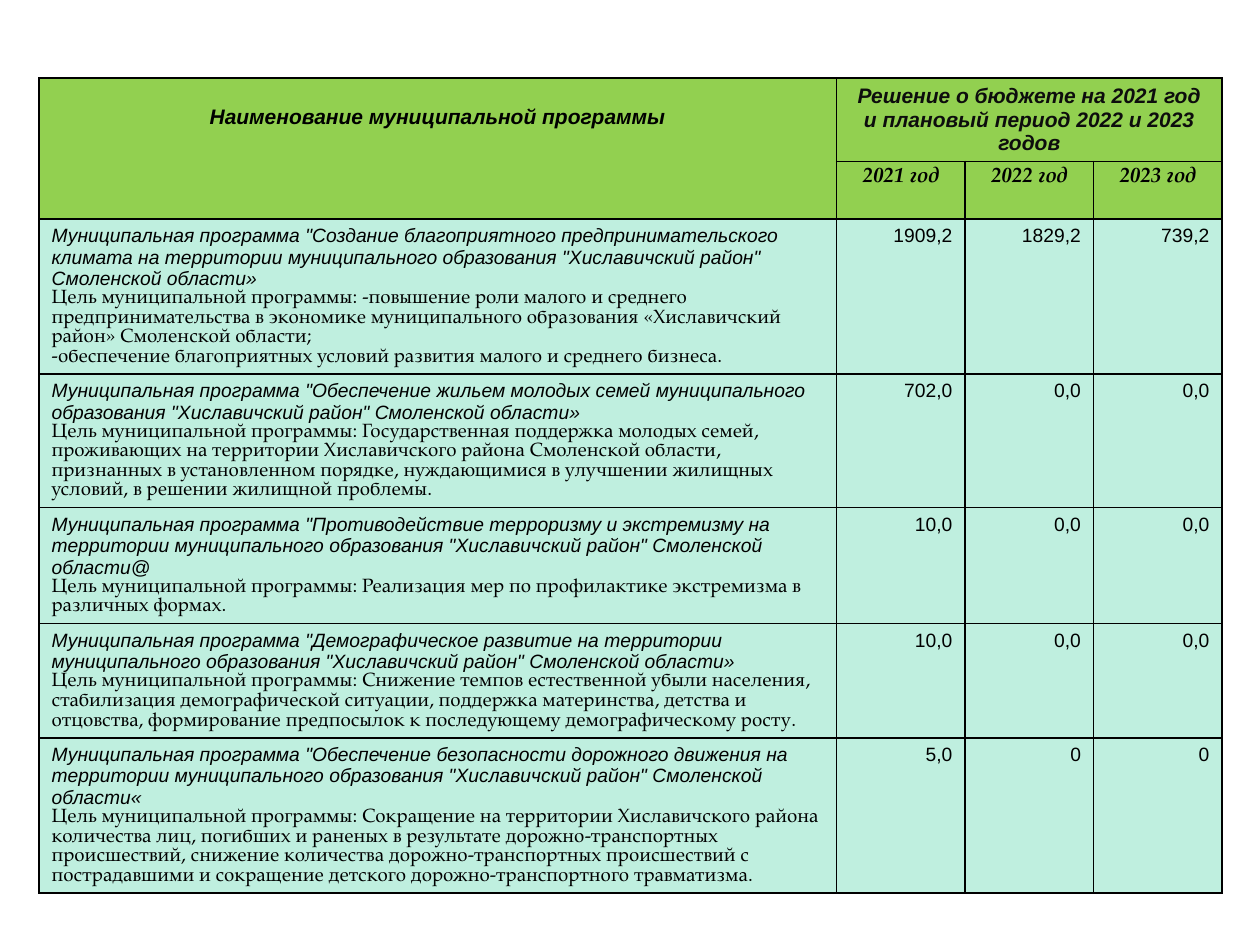
from lxml.etree import SubElement
from pptx import Presentation
from pptx.dml.color import RGBColor
from pptx.enum.text import PP_ALIGN as Align
from pptx.oxml.ns import qn
from pptx.util import Inches, Pt

SANS, SERIF = "Arial", "TeX Gyre Pagella"
HEADER_FILL, BODY_FILL = "92D050", "BFEFDF"
COLUMN_WIDTHS = [6.33, 1.02, 1.02, 1.02]
ROW_HEIGHTS = [0.66, 0.45, 1.23, 1.06, 0.92, 0.9, 1.23]
YEARS = ["2021 год", "2022 год", "2023 год"]
PROGRAMS = [
    (
        'Муниципальная программа "Создание благоприятного предпринимательского климата на территории '
        'муниципального образования "Хиславичский район" Смоленской области»',
        ["Цель муниципальной программы: -повышение роли малого и среднего предпринимательства в экономике "
         "муниципального образования «Хиславичский район» Смоленской области;",
         "-обеспечение благоприятных условий развития малого и среднего бизнеса."],
        ["1909,2", "1829,2", "739,2"],
    ),
    (
        'Муниципальная программа "Обеспечение жильем молодых семей муниципального образования '
        '"Хиславичский район" Смоленской области»',
        ["Цель муниципальной программы: Государственная поддержка молодых семей, проживающих на территории "
         "Хиславичского района Смоленской области, признанных в установленном порядке, нуждающимися в "
         "улучшении жилищных условий, в решении жилищной проблемы."],
        ["702,0", "0,0", "0,0"],
    ),
    (
        'Муниципальная программа "Противодействие терроризму и экстремизму на территории муниципального '
        'образования "Хиславичский район" Смоленской области@',
        ["Цель муниципальной программы: Реализация мер по профилактике экстремизма в различных формах."],
        ["10,0", "0,0", "0,0"],
    ),
    (
        'Муниципальная программа "Демографическое развитие на территории муниципального образования '
        '"Хиславичский район" Смоленской области»',
        ["Цель муниципальной программы: Снижение темпов естественной убыли населения, стабилизация "
         "демографической ситуации, поддержка материнства, детства и отцовства, формирование предпосылок "
         "к последующему демографическому росту."],
        ["10,0", "0,0", "0,0"],
    ),
    (
        'Муниципальная программа "Обеспечение безопасности дорожного движения на территории муниципального '
        'образования "Хиславичский район" Смоленской области«',
        ["Цель муниципальной программы: Сокращение на территории Хиславичского района количества лиц, "
         "погибших и раненых в результате дорожно-транспортных происшествий, снижение количества "
         "дорожно-транспортных происшествий с пострадавшими и сокращение детского дорожно-транспортного "
         "травматизма."],
        ["5,0", "0", "0"],
    ),
]


def rgb(value):
    """Turn a hex string into a colour."""
    return RGBColor.from_string(value)


def add_text(para, text, font=SANS, size=11, bold=False, italic=False, color="000000", align=Align.LEFT):
    """Write one styled run into a paragraph."""
    para.alignment = align
    span = para.add_run()
    span.text = text
    span.font.name, span.font.size = font, Pt(size)
    span.font.bold, span.font.italic = bold, italic
    span.font.color.rgb = rgb(color)


def style_cell(cell, fill):
    """Give a cell thin black borders and a solid fill."""
    properties = cell._tc.get_or_add_tcPr()
    for side in ("lnL", "lnR", "lnT", "lnB"):
        line = SubElement(properties, qn(f"a:{side}"), w=str(Pt(1)))
        SubElement(SubElement(line, qn("a:solidFill")), qn("a:srgbClr"), val="000000")
    cell.fill.solid()
    cell.fill.fore_color.rgb = rgb(fill)


def add_grid(page):
    """Add the sized and styled empty table."""
    frame = page.shapes.add_table(
        len(ROW_HEIGHTS), len(COLUMN_WIDTHS), Inches(0.31), Inches(0.62),
        Inches(sum(COLUMN_WIDTHS)), Inches(sum(ROW_HEIGHTS)))
    table = frame.table
    for column, width in zip(table.columns, COLUMN_WIDTHS):
        column.width = Inches(width)
    for index, (row, height) in enumerate(zip(table.rows, ROW_HEIGHTS)):
        row.height = Inches(height)
        for cell in row.cells:
            style_cell(cell, HEADER_FILL if index < 2 else BODY_FILL)
    return table


def fill_header(table):
    """Merge and write the two header rows."""
    name, budget = table.cell(0, 0), table.cell(0, 1)
    name.merge(table.cell(1, 0))
    budget.merge(table.cell(0, 3))
    name.margin_top = Inches(0.22)
    heading = dict(size=12, bold=True, italic=True, align=Align.CENTER)
    add_text(name.text_frame.paragraphs[0], "Наименование муниципальной программы", **heading)
    add_text(budget.text_frame.paragraphs[0],
             "Решение о бюджете на 2021 год и плановый период 2022 и 2023 годов", color="0D0D0D", **heading)
    for column, year in enumerate(YEARS, 1):
        add_text(table.cell(1, column).text_frame.paragraphs[0], year, font=SERIF, **heading)


def fill_program(table, row, title, goals, amounts):
    """Write one programme with its goals and yearly amounts."""
    frame = table.cell(row, 0).text_frame
    add_text(frame.paragraphs[0], title, italic=True)
    for goal in goals:
        add_text(frame.add_paragraph(), goal, font=SERIF)
    for column, amount in enumerate(amounts, 1):
        add_text(table.cell(row, column).text_frame.paragraphs[0], amount, align=Align.RIGHT)


def main():
    """Build and save the budget slide."""
    deck = Presentation()
    deck.slide_width, deck.slide_height = Inches(10), Inches(7.5)
    page = deck.slides.add_slide(deck.slide_layouts[6])
    table = add_grid(page)
    fill_header(table)
    for row, program in enumerate(PROGRAMS, 2):
        fill_program(table, row, *program)
    deck.save("out.pptx")


if __name__ == "__main__":
    main()
